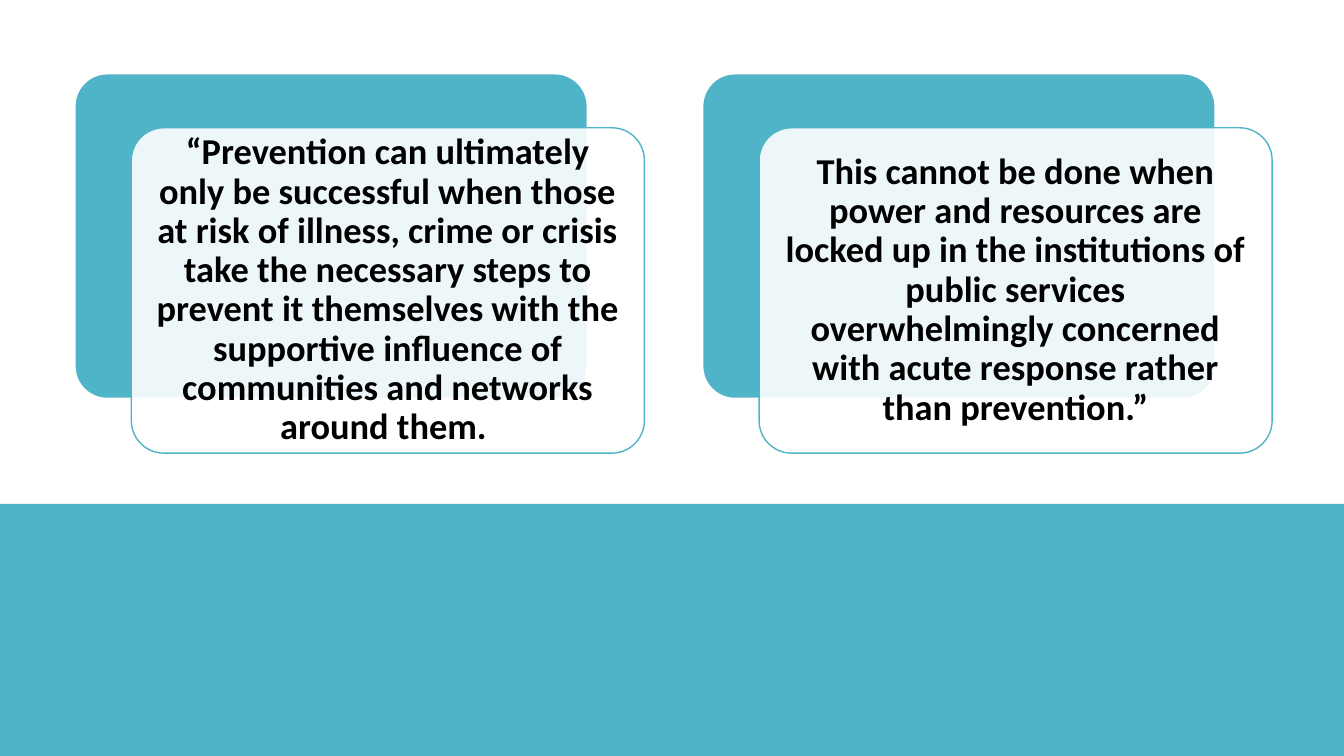
from lxml import etree
from pptx import Presentation, util as u
from pptx.dml.color import RGBColor
from pptx.enum import shapes, text
from pptx.oxml.ns import qn

QUOTES = [
    "“Prevention can ultimately only be successful when those at risk of "
    "illness, crime or crisis take the necessary steps to prevent it "
    "themselves with the supportive influence of communities and networks "
    "around them. ",
    "This cannot be done when power and resources are locked up in the "
    "institutions of public services overwhelmingly concerned with acute "
    "response rather than prevention.”",
]

TEAL = RGBColor(0x50, 0xB4, 0xC8)
WHITE = RGBColor(0xFF, 0xFF, 0xFF)
BLACK = RGBColor(0, 0, 0)

WIDE, HIGH = u.Cm(33.87), u.Cm(19.05)
BAND_TOP = u.Cm(12.7)
LEFT, TOP = u.Cm(1.88), u.Cm(1.85)
CARD_W, CARD_H = u.Cm(12.93), u.Cm(8.2)
STEP = u.Cm(15.82)
SHIFT_X, SHIFT_Y = u.Cm(1.43), u.Cm(1.37)
INSET = u.Cm(0.28)

FRAME = {"word_wrap": True, "vertical_anchor": text.MSO_ANCHOR.MIDDLE,
         "margin_left": INSET, "margin_right": INSET,
         "margin_top": INSET, "margin_bottom": INSET}
PARA = {"alignment": text.PP_ALIGN.CENTER, "line_spacing": 0.9}
FONT = {"name": "Calibri", "size": u.Pt(26), "bold": True}


def style(item, values):
    for key, value in values.items():
        setattr(item, key, value)


def add_box(slide, kind, place, fill):
    box = slide.shapes.add_shape(kind, *place)
    box.shadow.inherit = False
    box.fill.solid()
    box.fill.fore_color.rgb = fill
    box.line.fill.background()
    return box


def add_card(slide, place, fill, edge, width):
    card = add_box(slide, shapes.MSO_SHAPE.ROUNDED_RECTANGLE, place, fill)
    card.adjustments[0] = 0.1
    card.line.color.rgb = edge
    card.line.width = u.Pt(width)
    return card


def set_alpha(shape, percent):
    """Set the opacity of a solid fill."""
    color = shape.fill._xPr.find(qn("a:solidFill"))[0]
    etree.SubElement(color, qn("a:alpha"), val=str(percent * 1000))


def write(shape, words):
    frame = shape.text_frame
    style(frame, FRAME)
    para = frame.paragraphs[0]
    style(para, PARA)
    run = para.add_run()
    run.text = words
    style(run.font, FONT)
    run.font.color.rgb = BLACK


def main():
    deck = Presentation()
    deck.slide_width, deck.slide_height = WIDE, HIGH
    slide = deck.slides.add_slide(deck.slide_layouts[6])
    add_box(slide, shapes.MSO_SHAPE.RECTANGLE,
            (0, BAND_TOP, WIDE, HIGH - BAND_TOP), TEAL)
    for i, quote in enumerate(QUOTES):
        left = LEFT + i * STEP
        add_card(slide, (left, TOP, CARD_W, CARD_H), TEAL, WHITE, 1.5)
        front = add_card(slide, (left + SHIFT_X, TOP + SHIFT_Y, CARD_W, CARD_H),
                         WHITE, TEAL, 1)
        set_alpha(front, 90)
        write(front, quote)
    deck.save("out.pptx")


if __name__ == "__main__":
    main()
